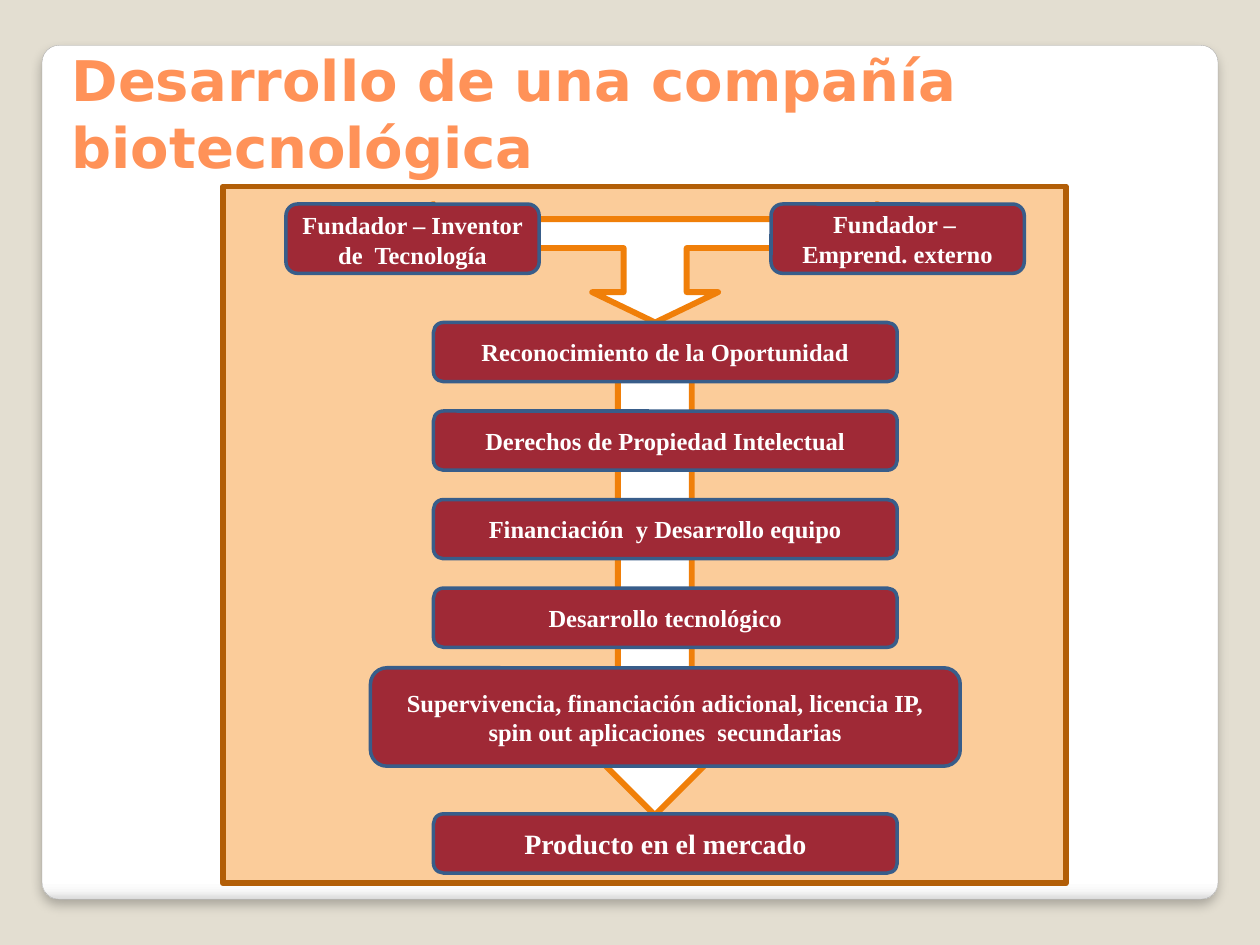
from lxml import etree
from pptx import Presentation
from pptx.dml.color import RGBColor
from pptx.enum import shapes, text
from pptx.oxml.ns import qn
from pptx.util import Pt

COLOURS = {
    "backdrop": "E3DED1", "white": "FFFFFF", "card_low": "F7F7F7",
    "card_edge": "DADADA", "card_line": "A4A4A4", "shadow": "000000",
    "panel": "FBCC9A", "panel_line": "B25E07", "arrow_line": "F07F09",
    "step": "9F2936", "step_line": "385D8A", "title": "FF9258",
}
SERIF = "Times New Roman"


def rgb(name):
    return RGBColor.from_string(COLOURS[name])


def colour_node(parent, name):
    return etree.SubElement(parent, qn("a:srgbClr"), val=COLOURS[name])


class FlowPage:
    """Draws styled elements on one slide, with lengths in points."""

    def __init__(self, page):
        self.page = page
        page.background.fill.solid()
        page.background.fill.fore_color.rgb = rgb("backdrop")

    def paint(self, shape, fill, line, weight):
        shape.shadow.inherit = False
        shape.fill.solid()
        shape.fill.fore_color.rgb = rgb(fill)
        shape.line.color.rgb = rgb(line)
        shape.line.width = Pt(weight)
        return shape

    def shape(self, kind, bounds, fill, line, weight):
        shape = self.page.shapes.add_shape(kind, *map(Pt, bounds))
        return self.paint(shape, fill, line, weight)

    def card(self, bounds):
        kind = shapes.MSO_SHAPE.ROUNDED_RECTANGLE
        card = self.shape(kind, bounds, "white", "card_line", 0.16)
        card.adjustments[0] = 0.02
        card.fill.gradient()
        properties = card._element.spPr
        stops = properties.find(".//" + qn("a:gsLst"))
        for stop in list(stops):
            stops.remove(stop)
        for percent, name in ((0, "white"), (98, "white"), (99, "card_low"), (100, "card_edge")):
            stop = etree.SubElement(stops, qn("a:gs"), pos=str(percent * 1000))
            colour_node(stop, name)
        properties.find(".//" + qn("a:lin")).set("ang", "5400000")
        effects = properties.find(qn("a:effectLst"))
        shadow = etree.SubElement(effects, qn("a:outerShdw"), blurRad=str(Pt(6)),
                                  dist=str(Pt(4)), dir="5400000", algn="t", rotWithShape="0")
        etree.SubElement(colour_node(shadow, "shadow"), qn("a:alpha"), val="25000")

    def outline(self, points):
        builder = self.page.shapes.build_freeform(Pt(points[0][0]), Pt(points[0][1]))
        builder.add_line_segments([(Pt(x), Pt(y)) for x, y in points[1:]], close=True)
        self.paint(builder.convert_to_shape(), "white", "arrow_line", 3.35)

    def add_words(self, box, words, size, font=SERIF, colour="white",
                  align=text.PP_ALIGN.CENTER, anchor=text.MSO_ANCHOR.MIDDLE):
        frame = box.text_frame
        frame.word_wrap = True
        frame.vertical_anchor = anchor
        para = frame.paragraphs[0]
        para.alignment = align
        span = para.add_run()
        span.text = words
        span.font.name = font
        span.font.size = Pt(size)
        span.font.bold = True
        span.font.color.rgb = rgb(colour)

    def step(self, bounds, words="", size=14):
        kind = shapes.MSO_SHAPE.ROUNDED_RECTANGLE
        box = self.shape(kind, bounds, "step", "step_line", 2)
        if words:
            self.add_words(box, words, size)

    def label(self, bounds, words, size, **style):
        box = self.page.shapes.add_textbox(*map(Pt, bounds))
        self.add_words(box, words, size, anchor=text.MSO_ANCHOR.TOP, **style)


def main():
    deck = Presentation()
    deck.slide_width, deck.slide_height = Pt(720), Pt(540)
    flow = FlowPage(deck.slides.add_slide(deck.slide_layouts[6]))

    flow.card((24, 25.9, 672, 488))
    flow.shape(shapes.MSO_SHAPE.RECTANGLE, (127.4, 106.6, 481.7, 398.2),
               "panel", "panel_line", 3.35)

    centre = 374.4
    half = [(36, 167), (18, 167), (18, 141.8), (126.7, 141.8), (126.7, 150.5),
            (162.7, 133.4), (126.7, 116.6), (126.7, 125.3)]
    right = [(centre + x, y) for x, y in half]
    left = [(centre - x, y) for x, y in reversed(half)]
    flow.outline([(centre, 184.3)] + right + left)

    flow.step((163.4, 116.6, 144.7, 39.6))
    flow.step((440.6, 116.6, 144.7, 39.6), "Fundador –  Emprend. externo")
    flow.shape(shapes.MSO_SHAPE.DOWN_ARROW, (332, 212.4, 84.4, 253.4),
               "white", "arrow_line", 3.35)
    flow.label((163.4, 116.6, 144.7, 41), "Fundador – Inventor de  Tecnología", 14)

    stages = ("Reconocimiento de la Oportunidad", "Derechos de Propiedad Intelectual",
              "Financiación  y Desarrollo equipo", "Desarrollo tecnológico")
    for index, words in enumerate(stages):
        flow.step((247.7, 184.3 + 50.6 * index, 265, 33.8), words)
    flow.step((211.7, 381.6, 337, 56.2),
              "Supervivencia, financiación adicional, licencia IP, "
              "spin out aplicaciones  secundarias")
    flow.step((247.7, 465.1, 265, 33.8), "Producto en el mercado", 16)

    flow.label((33.8, 22.3, 602, 59), "Desarrollo de una compañía biotecnológica", 32,
               font="DejaVu Sans", colour="title", align=text.PP_ALIGN.LEFT)
    deck.save("out.pptx")


if __name__ == "__main__":
    main()
